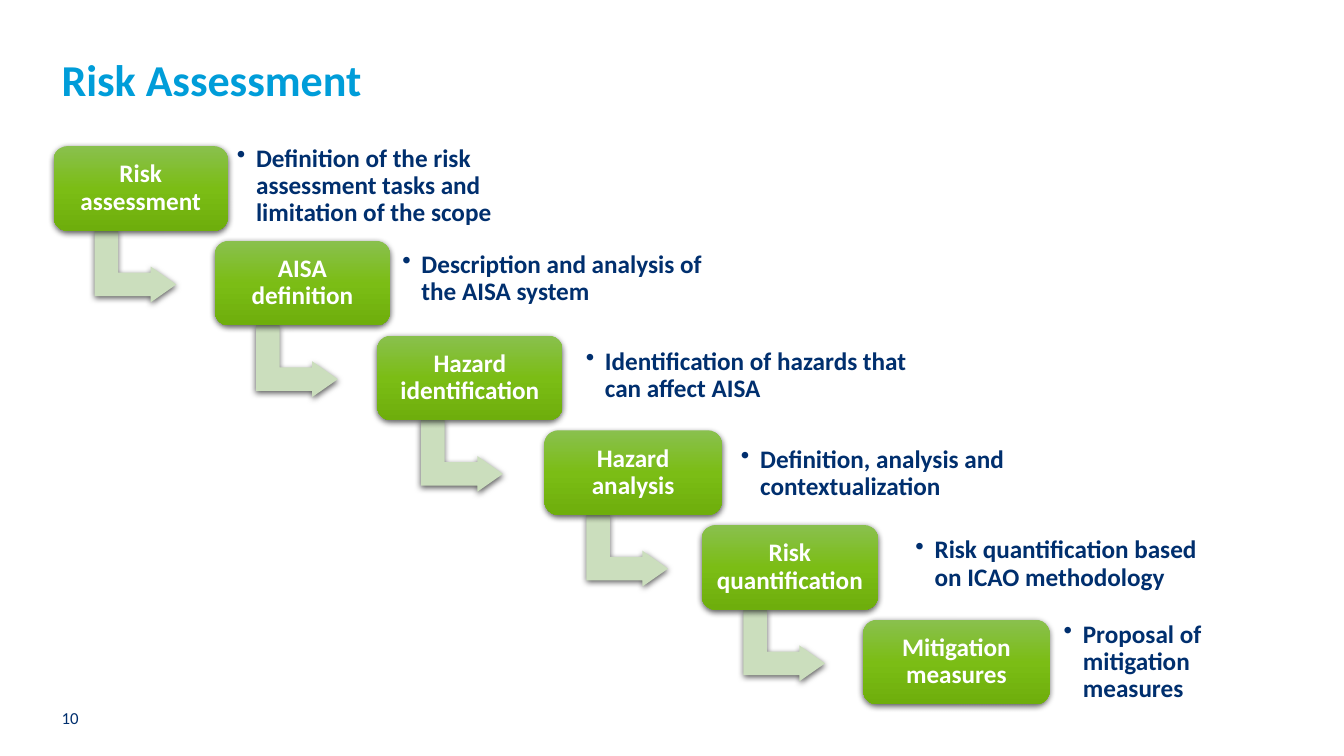
from copy import deepcopy
from pptx import Presentation
from pptx.util import Inches, Pt
from pptx.dml.color import RGBColor
from pptx.enum.shapes import MSO_SHAPE
from pptx.enum.text import MSO_ANCHOR, PP_ALIGN
from pptx.oxml import parse_xml
from pptx.oxml.ns import nsdecls, qn

HUES = {"title": "009DD9", "text": "002F6E", "label": "FFFFFF", "arrow": "CBDEBD",
        "top": "89C04E", "mid": "7BBD15", "base": "6EAE0C", "shade": "000000"}
FONT = "Calibri"
PAD = Inches(0.07)
INSET = Inches(0.11)
INDENT = Inches(0.19)

# label, left, width; note, left, width, drop: hundredths of the slide
STEPS = [
    ("Risk assessment", 3.98, 12.98,
     "Definition of the risk assessment tasks and limitation of the scope", 17.1, 21.83, 0.8),
    ("AISA definition", 15.98, 13.05,
     "Description and analysis of the AISA system", 29.41, 24.91, 0.53),
    ("Hazard identification", 28.06, 13.8,
     "Identification of hazards that can affect AISA", 43.06, 26.03, 0.8),
    ("Hazard analysis", 40.51, 13.2,
     "Definition, analysis and contextualization", 54.61, 29.41, 1.2),
    ("Risk quantification", 52.21, 13.13,
     "Risk quantification based on ICAO methodology", 67.59, 22.43, 0.67),
    ("Mitigation measures", 64.22, 13.88,
     "Proposal of mitigation measures", 78.62, 11.85, 1.07),
]

deck = Presentation()
deck.slide_width, deck.slide_height = Inches(13.33), Inches(7.5)
COL, ROW = deck.slide_width / 100, deck.slide_height / 100


def area(left, top, width, height):
    return int(left * COL), int(top * ROW), int(width * COL), int(height * ROW)


def rgb(name):
    return RGBColor.from_string(HUES[name])


def write(shape, text, size, hue, bold=True, pad=0, anchor=MSO_ANCHOR.MIDDLE,
          align=PP_ALIGN.LEFT, space=0.9, bullet=False):
    frame = shape.text_frame
    frame.word_wrap = True
    frame.vertical_anchor = anchor
    frame.margin_left = frame.margin_right = pad
    frame.margin_top = frame.margin_bottom = pad
    para = frame.paragraphs[0]
    para.alignment = align
    para.line_spacing = space
    if bullet:
        props = para._p.get_or_add_pPr()
        props.set("marL", str(INDENT))
        props.set("indent", str(-INDENT))
        props.append(parse_xml(f'<a:buChar {nsdecls("a")} char="•"/>'))
    run = para.add_run()
    run.text = text
    run.font.name, run.font.size, run.font.bold = FONT, Pt(size), bold
    run.font.color.rgb = rgb(hue)


def shade(shape):
    shape.line.fill.background()
    shape._element.spPr.append(parse_xml(
        f'<a:effectLst {nsdecls("a")}><a:outerShdw blurRad="{Pt(4.5)}" dist="{Pt(1.5)}" '
        f'dir="5400000" rotWithShape="0"><a:srgbClr val="{HUES["shade"]}">'
        '<a:alpha val="63000"/></a:srgbClr></a:outerShdw></a:effectLst>'))


def blend(shape):
    shape.fill.gradient()
    shape.fill.gradient_angle = 270
    stops = shape._element.spPr.find(".//" + qn("a:gsLst"))
    stops.append(deepcopy(stops[-1]))
    for stop, hue, place in zip(shape.fill.gradient_stops, ("top", "mid", "base"), (0, 0.5, 1)):
        stop.color.rgb = rgb(hue)
        stop.position = place


def add_arrow(slide, box):
    left, top, width, height = box
    wide, tall = int(0.845 * height), int(0.964 * height)
    arrow = slide.shapes.add_shape(
        MSO_SHAPE.BENT_UP_ARROW, int(left + 0.265 * width), int(top + 0.94 * height), wide, tall)
    arrow.rotation = 90
    for i, value in enumerate((0.328, 0.25, 0.358)):
        arrow.adjustments[i] = value
    arrow.fill.solid()
    arrow.fill.fore_color.rgb = rgb("arrow")
    shade(arrow)


def add_step(slide, box, label):
    card = slide.shapes.add_shape(MSO_SHAPE.ROUNDED_RECTANGLE, *box)
    card.adjustments[0] = 0.167
    blend(card)
    shade(card)
    write(card, label, 18, "label", pad=INSET, align=PP_ALIGN.CENTER)


def add_note(slide, box, text):
    write(slide.shapes.add_textbox(*box), text, 18, "text", pad=PAD, bullet=True)


def add_stairs(slide, top, pitch, height):
    for i, (label, left, width, note, start, span, drop) in enumerate(STEPS):
        level = top + i * pitch
        box = area(left, level, width, height)
        if i < len(STEPS) - 1:
            add_arrow(slide, box)
        add_step(slide, box, label)
        add_note(slide, area(start, level + drop, span, 9.07), note)


def add_frame(slide):
    title = slide.shapes.add_textbox(*area(4.58, 7.87, 57.69, 6))
    write(title, "Risk Assessment", 31.5, "title")
    number = slide.shapes.add_textbox(*area(4.58, 93.6, 14.33, 3.47))
    write(number, "10", 12, "text", bold=False, anchor=MSO_ANCHOR.TOP, space=1.0)


def main():
    slide = deck.slides.add_slide(deck.slide_layouts[6])
    add_frame(slide)
    add_stairs(slide, 19.33, 12.53, 11.2)
    deck.save("out.pptx")


if __name__ == "__main__":
    main()
